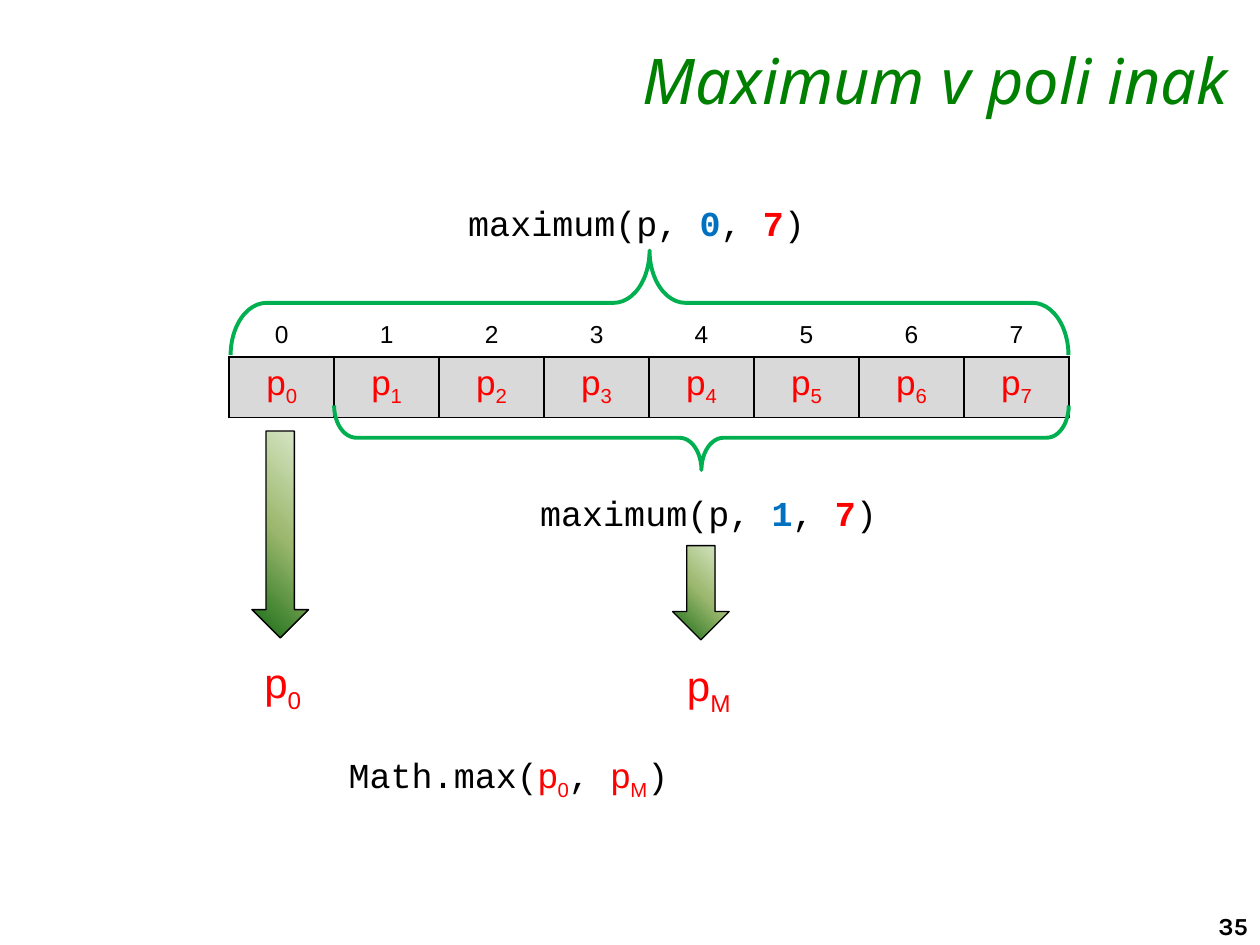
"""Build the slide that finds an array maximum by splitting off the first element."""
from copy import deepcopy

from lxml.etree import SubElement
from pptx import Presentation
from pptx.dml.color import RGBColor
from pptx.enum.shapes import MSO_SHAPE
from pptx.enum.text import PP_ALIGN
from pptx.oxml.ns import qn
from pptx.util import Cm, Pt

BLACK = RGBColor(0x00, 0x00, 0x00)
RED = RGBColor(0xFF, 0x00, 0x00)
BLUE = RGBColor(0x00, 0x70, 0xC0)
TITLE_GREEN = RGBColor(0x00, 0x80, 0x00)
BRACE_GREEN = RGBColor(0x00, 0xB0, 0x50)
CELL_GREY = RGBColor(0xD9, 0xD9, 0xD9)
ARROW_LIGHT = RGBColor(0xDD, 0xEB, 0xCF)
ARROW_MIDDLE = RGBColor(0x9C, 0xB8, 0x6E)
ARROW_DARK = RGBColor(0x15, 0x6B, 0x13)
NO_TABLE_STYLE = "{2D5ABB26-0587-4C30-8999-92F81FD0307C}"

CODE = ("Courier New", BLACK, False, False)
ELEMENT = ("Arial", RED, False, False)
SUBSCRIPT = ("Arial", RED, False, True)
FIRST_INDEX = ("Courier New", BLUE, True, False)
LAST_INDEX = ("Courier New", RED, True, False)


def write_spans(para, size, spans, align=PP_ALIGN.LEFT):
    para.alignment = align
    para.font.size = Pt(size)
    for text, (name, color, bold, lowered) in spans:
        span = para.add_run()
        span.text = text
        span.font.name = name
        span.font.size = Pt(size)
        span.font.bold = bold
        span.font.color.rgb = color
        if lowered:
            span._r.get_or_add_rPr().set("baseline", "-25000")


def add_border(cell, side):
    border = SubElement(cell._tc.get_or_add_tcPr(), qn(f"a:{side}"), w=str(Pt(1)))
    fill = SubElement(border, qn("a:solidFill"))
    SubElement(fill, qn("a:srgbClr"), val=str(BLACK))


deck = Presentation()
deck.slide_width, deck.slide_height = Cm(25.4), Cm(19.05)
page = deck.slides.add_slide(deck.slide_layouts[6])

number_box = page.shapes.add_textbox(Cm(24.31), Cm(18.24), Cm(1.3), Cm(0.84))
number_style = ("Karla", BLACK, True, False)
write_spans(number_box.text_frame.paragraphs[0], 14, [("35", number_style)])

title_box = page.shapes.add_textbox(Cm(5.82), Cm(0.79), Cm(19.18), Cm(1.47))
title_box.text_frame.word_wrap = True
title_box.text_frame.margin_top = Cm(0.05)
title = title_box.text_frame.paragraphs[0]
title.text = "Maximum v poli inak"
title.alignment = PP_ALIGN.RIGHT
title.font.name = "Noto Sans"
title.font.size = Pt(36)
title.font.italic = True
title.font.color.rgb = TITLE_GREEN

array_frame = page.shapes.add_table(2, 8, Cm(4.62), Cm(6.35), Cm(16.93), Cm(1.68))
array = array_frame.table
array.first_row = array.horz_banding = False
array._tbl.tblPr.find(qn("a:tableStyleId")).text = NO_TABLE_STYLE
array.rows[0].height, array.rows[1].height = Cm(0.64), Cm(1.04)
for index in range(8):
    index_cell, value_cell = array.cell(0, index), array.cell(1, index)
    add_border(index_cell, "lnB")
    for side in ("lnL", "lnR", "lnT", "lnB"):
        add_border(value_cell, side)
    index_cell.fill.background()
    value_cell.fill.solid()
    value_cell.fill.fore_color.rgb = CELL_GREY
    index_style = ("Arial", BLACK, False, False)
    write_spans(index_cell.text_frame.paragraphs[0], 14,
                [(str(index), index_style)], PP_ALIGN.CENTER)
    write_spans(value_cell.text_frame.paragraphs[0], 20,
                [("p", ELEMENT), (str(index), SUBSCRIPT)], PP_ALIGN.CENTER)

for left, top, width, height, rotation in (
    (12.04, -2.34, 2.11, 16.89, 270),
    (13.49, 1.42, 1.3, 14.81, 90),
):
    brace = page.shapes.add_shape(
        MSO_SHAPE.RIGHT_BRACE, Cm(left), Cm(top), Cm(width), Cm(height))
    brace.rotation = rotation
    brace.adjustments[0] = 0.343
    brace.shadow.inherit = False
    brace.fill.background()
    brace.line.color.rgb = BRACE_GREEN
    brace.line.width = Pt(2.25)

for left, top, height in ((5.08, 8.69, 4.17), (13.56, 11, 1.9)):
    arrow = page.shapes.add_shape(
        MSO_SHAPE.DOWN_ARROW, Cm(left), Cm(top), Cm(1.14), Cm(height))
    arrow.shadow.inherit = False
    arrow.fill.gradient()
    arrow.fill.gradient_angle = 225
    stop_list = arrow._element.spPr.find(".//" + qn("a:gsLst"))
    stop_list.insert(1, deepcopy(stop_list[0]))
    colors = (ARROW_LIGHT, ARROW_MIDDLE, ARROW_DARK)
    for stop, position, color in zip(arrow.fill.gradient_stops, (0, 0.5, 1), colors):
        stop.position = position
        stop.color.rgb = color
    arrow.line.color.rgb = BLACK
    arrow.line.width = Pt(0.75)

for left, top, first in ((9.19, 3.94, "0"), (10.64, 9.78, "1")):
    call_box = page.shapes.add_textbox(Cm(left), Cm(top), Cm(7.8), Cm(1.12))
    call_box.text_frame.word_wrap = True
    write_spans(call_box.text_frame.paragraphs[0], 20, [
        ("maximum(p, ", CODE), (first, FIRST_INDEX), (", ", CODE),
        ("7", LAST_INDEX), (")", CODE)])

for left, top, width, inset, subscript in (
    (5.08, 13.11, 1.45, 0.25, "0"),
    (13.39, 13.18, 1.98, 0.46, "M"),
):
    result_box = page.shapes.add_textbox(Cm(left), Cm(top), Cm(width), Cm(1.27))
    result_box.text_frame.margin_left = Cm(inset)
    write_spans(result_box.text_frame.paragraphs[0], 24,
                [("p", ELEMENT), (subscript, SUBSCRIPT)])

answer_box = page.shapes.add_textbox(Cm(6.78), Cm(15.06), Cm(7.37), Cm(1.12))
answer_box.text_frame.word_wrap = True
write_spans(answer_box.text_frame.paragraphs[0], 20, [
    ("Math.max(", CODE), ("p", ELEMENT), ("0", SUBSCRIPT), (", ", CODE),
    ("p", ELEMENT), ("M", SUBSCRIPT), (")", CODE)])

deck.save("out.pptx")
